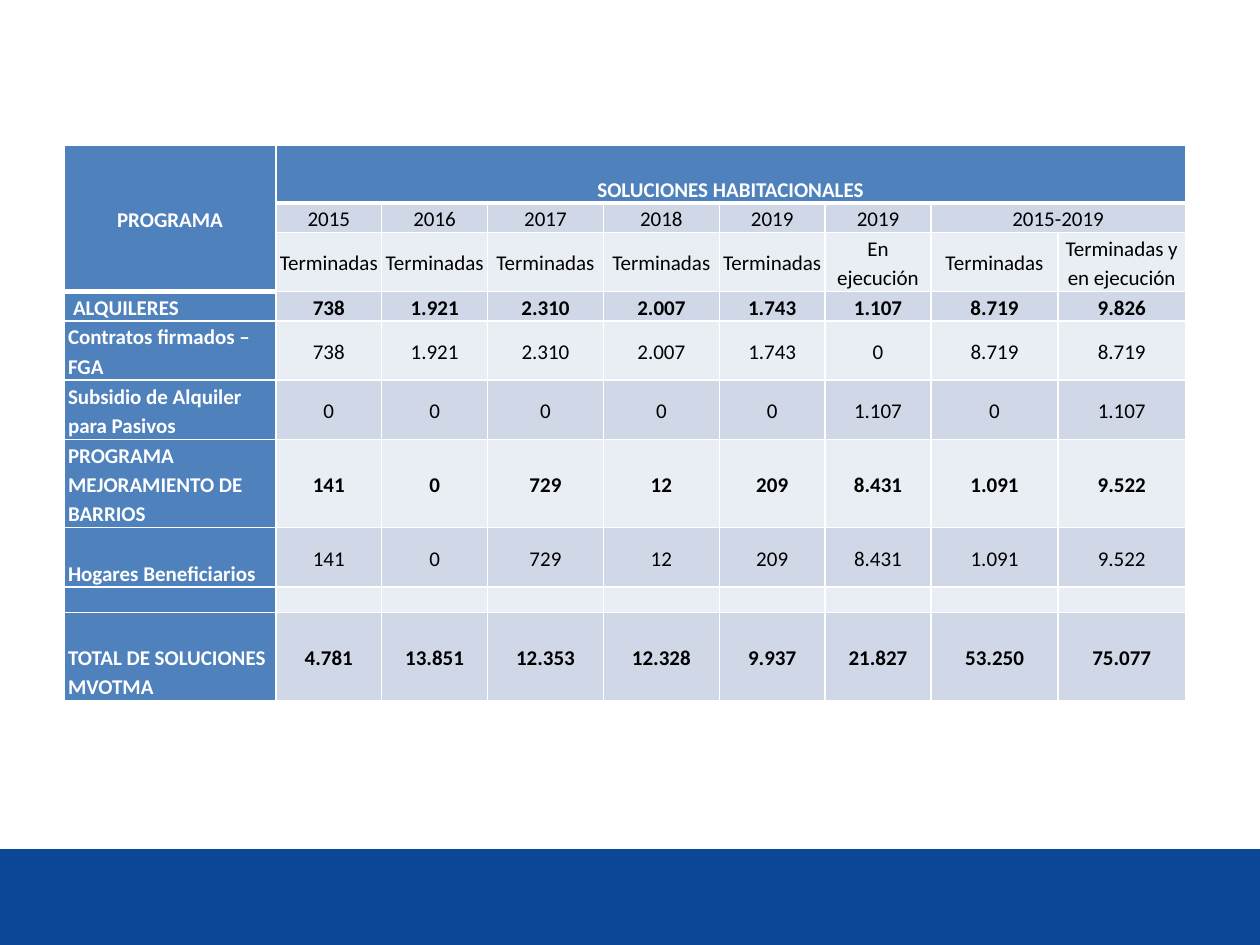
from pptx import Presentation
from pptx import util as u
from pptx.dml import color
from pptx.enum import shapes, text
from lxml import etree

INK = {"band": "0B4697", "head": "4F81BD", "dark": "D0D8E8",
       "pale": "E9EDF4", "white": "FFFFFF", "black": "000000"}
NS = "http://schemas.openxmlformats.org/drawingml/2006/main"
WIDE = [1.68, 0.84, 0.84, 0.92, 0.92, 0.84, 0.84, 1.01, 1.01]
HIGH = [0.46, 0.23, 0.47, 0.23, 0.47, 0.47, 0.7, 0.47, 0.2, 0.7]
DONE = "Terminadas"
ROWS = [
    ["PROGRAMA", "SOLUCIONES HABITACIONALES"] + [""] * 7,
    ["", "2015", "2016", "2017", "2018", "2019", "2019", "2015-2019", ""],
    [""] + [DONE] * 5 + ["En ejecución", DONE, "Terminadas y en ejecución"],
    ["ALQUILERES", "738", "1.921", "2.310", "2.007", "1.743", "1.107", "8.719", "9.826"],
    ["Contratos firmados – FGA", "738", "1.921", "2.310", "2.007", "1.743", "0", "8.719", "8.719"],
    ["Subsidio de Alquiler para Pasivos", "0", "0", "0", "0", "0", "1.107", "0", "1.107"],
    ["PROGRAMA MEJORAMIENTO DE BARRIOS", "141", "0", "729", "12", "209", "8.431", "1.091", "9.522"],
    ["Hogares Beneficiarios", "141", "0", "729", "12", "209", "8.431", "1.091", "9.522"],
    [""] * 9,
    ["TOTAL DE SOLUCIONES MVOTMA", "4.781", "13.851", "12.353", "12.328", "9.937", "21.827", "53.250", "75.077"],
]
SPANS = [(0, 0, 2, 0), (0, 1, 0, 8), (1, 7, 1, 8)]
BOLD = {0, 3, 6, 9}
LOW = {(0, 1), (7, 0), (9, 0)}
THICK = {"lnB": {(0, c) for c in range(9)} | {(2, 0)},
         "lnT": {(1, c) for c in range(1, 9)} | {(3, 0)}}


def put(item, vals):
    """Set each named attribute of an item."""
    for key, val in vals.items():
        setattr(item, key, val)


def tint(fill, name):
    """Give a fill one solid colour."""
    fill.solid()
    fill.fore_color.rgb = color.RGBColor.from_string(INK[name])


def edge(cell, spot):
    """Draw the white borders of a cell ahead of its fill."""
    props = cell._tc.get_or_add_tcPr()
    for i, side in enumerate(("lnL", "lnR", "lnT", "lnB")):
        wide = 3 if spot in THICK.get(side, ()) else 1
        line = etree.Element(f"{{{NS}}}{side}", w=str(u.Pt(wide)))
        fill = etree.SubElement(line, f"{{{NS}}}solidFill")
        etree.SubElement(fill, f"{{{NS}}}srgbClr", val=INK["white"])
        props.insert(i, line)


def write(cell, words, row, col):
    """Fill one cell and format its words."""
    head = row == 0 or col == 0
    tint(cell.fill, "head" if head else "dark" if row % 2 else "pale")
    edge(cell, (row, col))
    anchor = text.MSO_ANCHOR.BOTTOM if (row, col) in LOW else text.MSO_ANCHOR.MIDDLE
    put(cell, {"margin_left": u.Inches(0.07 if (row, col) == (3, 0) else 0.03),
               "margin_right": u.Inches(0.03), "margin_top": 0,
               "margin_bottom": 0, "vertical_anchor": anchor})
    para = cell.text_frame.paragraphs[0]
    if not words:
        etree.SubElement(para._p, f"{{{NS}}}endParaRPr", sz="1200")
        return
    left = col == 0 and row > 2
    put(para, {"alignment": text.PP_ALIGN.LEFT if left else text.PP_ALIGN.CENTER,
               "line_spacing": 1.15})
    run = para.add_run()
    run.text = words
    put(run.font, {"name": "Calibri", "size": u.Pt(12), "bold": head or row in BOLD})
    tint(run.font.fill, "white" if head else "black")


def grid(slide, x, y, w, h):
    """Place the table of housing solutions in a box."""
    table = slide.shapes.add_table(len(HIGH), len(WIDE), x, y, w, h).table
    for col, size in zip(table.columns, WIDE):
        col.width = int(w * size / sum(WIDE))
    for row, size in zip(table.rows, HIGH):
        row.height = int(h * size / sum(HIGH))
    for r, line in enumerate(ROWS):
        for c, words in enumerate(line):
            write(table.cell(r, c), words, r, c)
    for top, left, low, right in SPANS:
        table.cell(top, left).merge(table.cell(low, right))


def band(slide, x, y, w, h):
    """Place the blue footer band in a box."""
    bar = slide.shapes.add_shape(shapes.MSO_SHAPE.RECTANGLE, x, y, w, h)
    bar.shadow.inherit = False
    tint(bar.fill, "band")
    bar.line.fill.background()


def main():
    """Build and save the slide."""
    deck = Presentation()
    put(deck, {"slide_width": u.Inches(10), "slide_height": u.Inches(7.5)})
    slide = deck.slides.add_slide(deck.slide_layouts[6])
    band(slide, *map(u.Inches, (0, 6.74, 10, 0.76)))
    grid(slide, *map(u.Inches, (0.51, 1.15, sum(WIDE), sum(HIGH))))
    deck.save("out.pptx")


if __name__ == "__main__":
    main()
